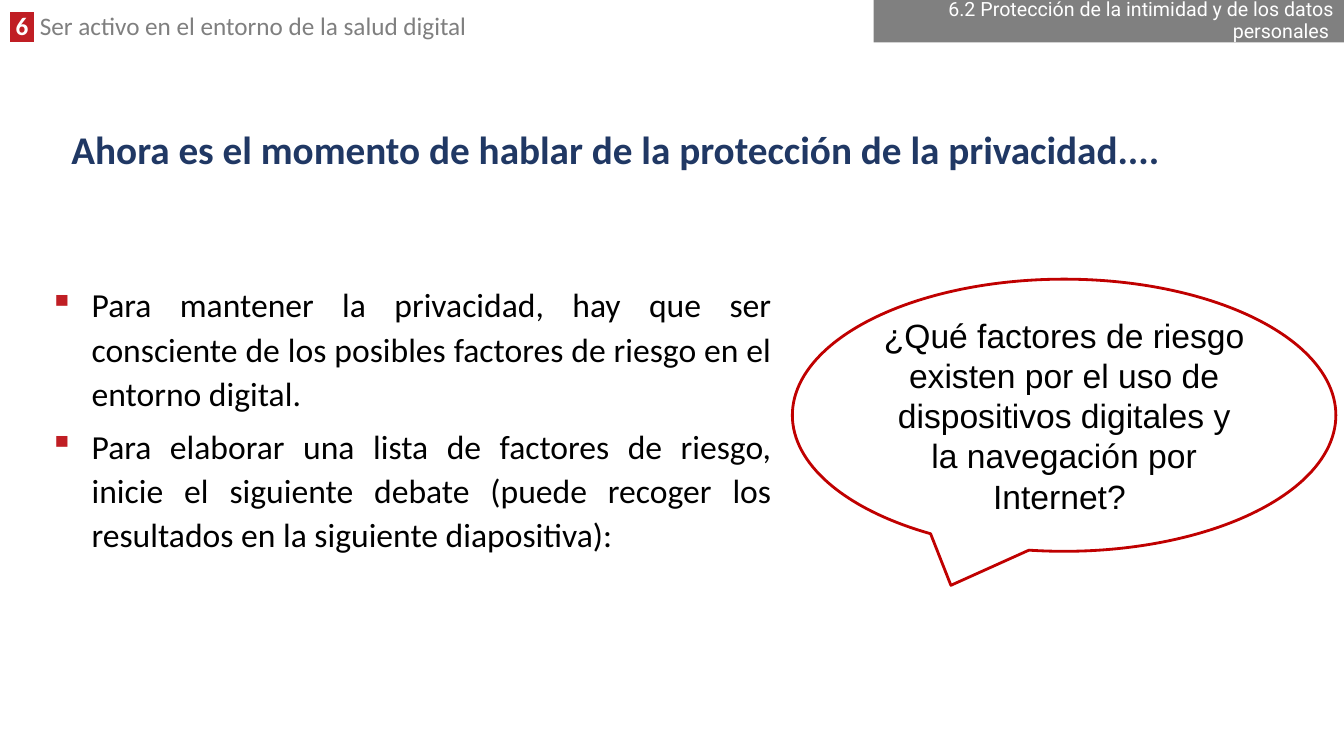
from lxml import etree
from pptx import Presentation
from pptx.dml.color import RGBColor
from pptx.enum import shapes, text
from pptx.oxml.ns import qn
from pptx.util import Inches, Pt

RED, CRIMSON, NAVY = "C01E24", "C00000", "203864"
GREY, BANNER_GREY, WHITE, BLACK = "7F7F7F", "808080", "FFFFFF", "000000"


def colour(hex_value):
    return RGBColor.from_string(hex_value)


class SlideBuilder:
    """Places elements by percentages of the slide's width and height."""

    heading_font = "Calibri"

    def __init__(self, deck):
        self.deck = deck
        self.slide = deck.slides.add_slide(deck.slide_layouts[6])

    def area(self, left, top, width, height):
        across, down = self.deck.slide_width / 100, self.deck.slide_height / 100
        return (round(left * across), round(top * down),
                round(width * across), round(height * down))

    def style(self, font, size, hex_value, name=heading_font, bold=False):
        font.size, font.name, font.bold = Pt(size), name, bold
        font.color.rgb = colour(hex_value)

    def textbox(self, *place, anchor=text.MSO_ANCHOR.TOP):
        frame = self.slide.shapes.add_textbox(*self.area(*place)).text_frame
        frame.word_wrap = True
        frame.vertical_anchor = anchor
        return frame

    def chapter(self, number, name, *place):
        line = self.textbox(*place).paragraphs[0]
        line.line_spacing = 0.8
        badge, label = line.add_run(), line.add_run()
        badge.text, label.text = number, name
        self.style(badge.font, 18, WHITE, bold=True)
        self.style(label.font, 18, GREY)
        # Coloured badge behind the chapter number
        highlight = etree.Element(qn("a:highlight"))
        etree.SubElement(highlight, qn("a:srgbClr"), val=RED)
        badge.font._element.find(qn("a:solidFill")).addnext(highlight)

    def title(self, words, *place):
        line = self.textbox(*place, anchor=text.MSO_ANCHOR.MIDDLE).paragraphs[0]
        line.text = words
        line.line_spacing = 0.9
        self.style(line.font, 28, NAVY, bold=True)

    def bullets(self, items, *place):
        frame = self.textbox(*place)
        for index, item in enumerate(items):
            line = frame.add_paragraph() if index else frame.paragraphs[0]
            line.text = item
            line.alignment = text.PP_ALIGN.JUSTIFY
            line.line_spacing = 1.1
            if index:
                line.space_before = Pt(6)
            props = line._p.get_or_add_pPr()
            props.set("marL", str(Inches(0.5)))
            props.set("indent", str(Inches(-0.42)))
            tint = etree.SubElement(props, qn("a:buClr"))
            etree.SubElement(tint, qn("a:srgbClr"), val=RED)
            etree.SubElement(props, qn("a:buChar"), char="▪")
            self.style(line.font, 24, BLACK)

    def panel(self, kind, words, fill, align, font, *place, outline=None, spacing=None):
        panel = self.slide.shapes.add_shape(kind, *self.area(*place))
        panel.shadow.inherit = False
        panel.fill.solid()
        panel.fill.fore_color.rgb = colour(fill)
        if outline:
            panel.line.color.rgb = colour(outline)
            panel.line.width = Pt(2)
        else:
            panel.line.fill.background()
        panel.text_frame.word_wrap = True
        panel.text_frame.vertical_anchor = text.MSO_ANCHOR.MIDDLE
        line = panel.text_frame.paragraphs[0]
        line.text = words
        line.alignment, line.line_spacing = align, spacing
        self.style(line.font, *font)


def main():
    deck = Presentation()
    deck.slide_width, deck.slide_height = Inches(13.33), Inches(7.5)
    page = SlideBuilder(deck)

    # Header: chapter on the left, section banner on the right
    page.chapter(" 6 ", " Ser activo en el entorno de la salud digital",
                 0, 1.47, 42.84, 4.53)
    page.panel(shapes.MSO_SHAPE.RECTANGLE,
               "6.2 Protección de la intimidad y de los datos personales ",
               BANNER_GREY, text.PP_ALIGN.RIGHT, (14, WHITE, "Roboto"),
               65, 0, 35, 5.6, spacing=0.9)

    # Title
    page.title("Ahora es el momento de hablar de la protección de la privacidad....",
               4.58, 15.73, 90.77, 8.8)

    # Discussion points
    page.bullets([
        "Para mantener la privacidad, hay que ser consciente de los posibles "
        "factores de riesgo en el entorno digital.",
        "Para elaborar una lista de factores de riesgo, inicie el siguiente "
        "debate (puede recoger los resultados en la siguiente diapositiva):",
    ], 2.33, 36.4, 55.81, 39.6)

    # Question bubble
    page.panel(shapes.MSO_SHAPE.OVAL_CALLOUT,
               "¿Qué factores de riesgo existen por el uso de dispositivos "
               "digitales y la navegación por Internet? ",
               WHITE, text.PP_ALIGN.CENTER, (24, BLACK, "Arial"),
               58.96, 36.93, 40.44, 36, outline=CRIMSON)

    deck.save("out.pptx")


if __name__ == "__main__":
    main()
